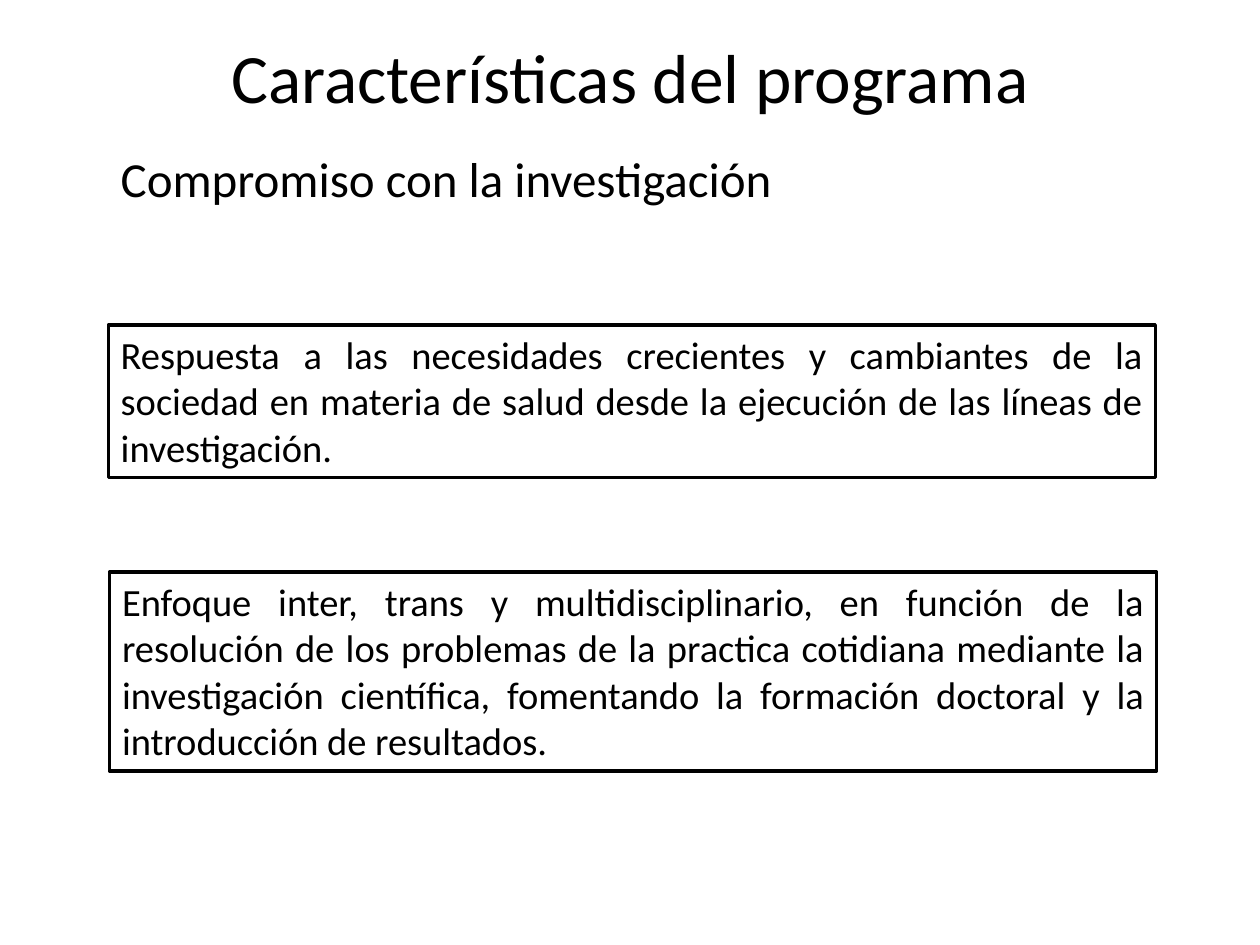
from pptx import Presentation
from pptx.dml.color import RGBColor
from pptx.enum.shapes import MSO_SHAPE as Shape
from pptx.enum.text import MSO_ANCHOR as Anchor, PP_ALIGN as Align
from pptx.util import Inches, Pt

BLACK = RGBColor(0x00, 0x00, 0x00)
WHITE = RGBColor(0xFF, 0xFF, 0xFF)
FONT = "Calibri"

TITLE = "Características del programa"
TOPIC = "Compromiso con la investigación"
NEED = (
    "Respuesta a las necesidades crecientes y cambiantes de la sociedad en "
    "materia de salud desde la ejecución de las líneas de investigación."
)
FOCUS = (
    "Enfoque inter, trans y multidisciplinario, en función de la resolución "
    "de los problemas de la practica cotidiana mediante la investigación "
    "científica, fomentando la formación doctoral y la introducción de "
    "resultados."
)


def write(shape, text, size, align, anchor=Anchor.TOP, wrap=True):
    """Fill a shape with one styled paragraph."""
    frame = shape.text_frame
    frame.text = text
    frame.word_wrap = wrap
    frame.vertical_anchor = anchor
    line = frame.paragraphs[0]
    line.alignment = align
    font = line.runs[0].font
    font.name = FONT
    font.size = Pt(size)
    font.color.rgb = BLACK


def add_title(slide, box):
    """Place the centred slide title."""
    shape = slide.shapes.add_textbox(*map(Inches, box))
    write(shape, TITLE, 39.6, Align.CENTER, Anchor.MIDDLE)


def add_topic(slide, box):
    """Place the subtitle on a single line."""
    shape = slide.shapes.add_textbox(*map(Inches, box))
    write(shape, TOPIC, 28, Align.LEFT, wrap=False)


def add_panel(slide, box, text):
    """Place a framed, justified statement."""
    shape = slide.shapes.add_shape(Shape.RECTANGLE, *map(Inches, box))
    shape.shadow.inherit = False
    shape.fill.solid()
    shape.fill.fore_color.rgb = WHITE
    shape.line.color.rgb = BLACK
    shape.line.width = Pt(2)
    write(shape, text, 22, Align.JUSTIFY)


def main():
    """Build and save the slide."""
    deck = Presentation()
    deck.slide_width = Inches(10)
    deck.slide_height = Inches(7.5)
    slide = deck.slides.add_slide(deck.slide_layouts[6])
    add_title(slide, (0.5, 0.3, 9, 0.61))
    add_topic(slide, (0.86, 1.13, 5.42, 0.57))
    add_panel(slide, (0.86, 2.58, 8.31, 1.21), NEED)
    add_panel(slide, (0.87, 4.54, 8.31, 1.58), FOCUS)
    deck.save("out.pptx")


if __name__ == "__main__":
    main()
